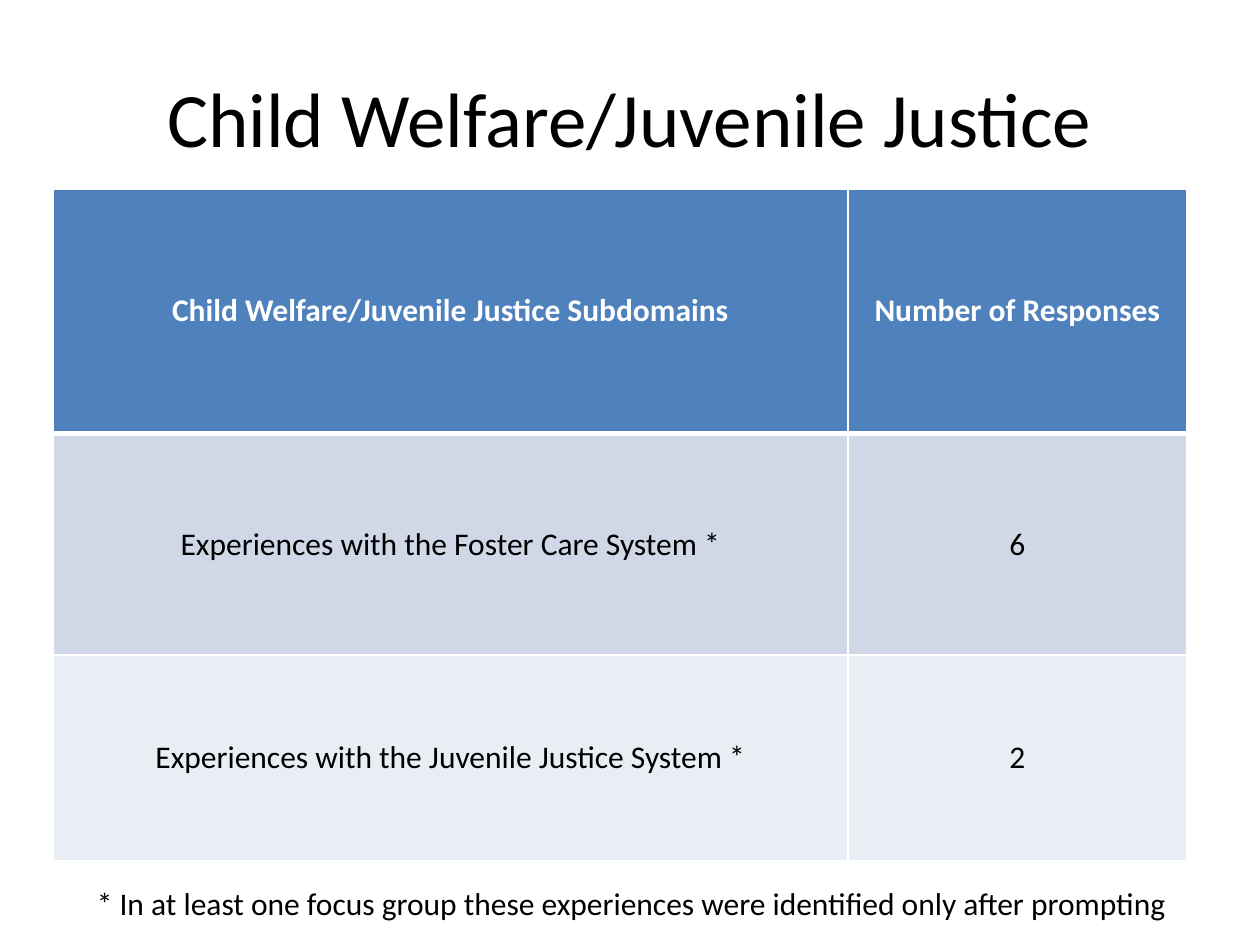
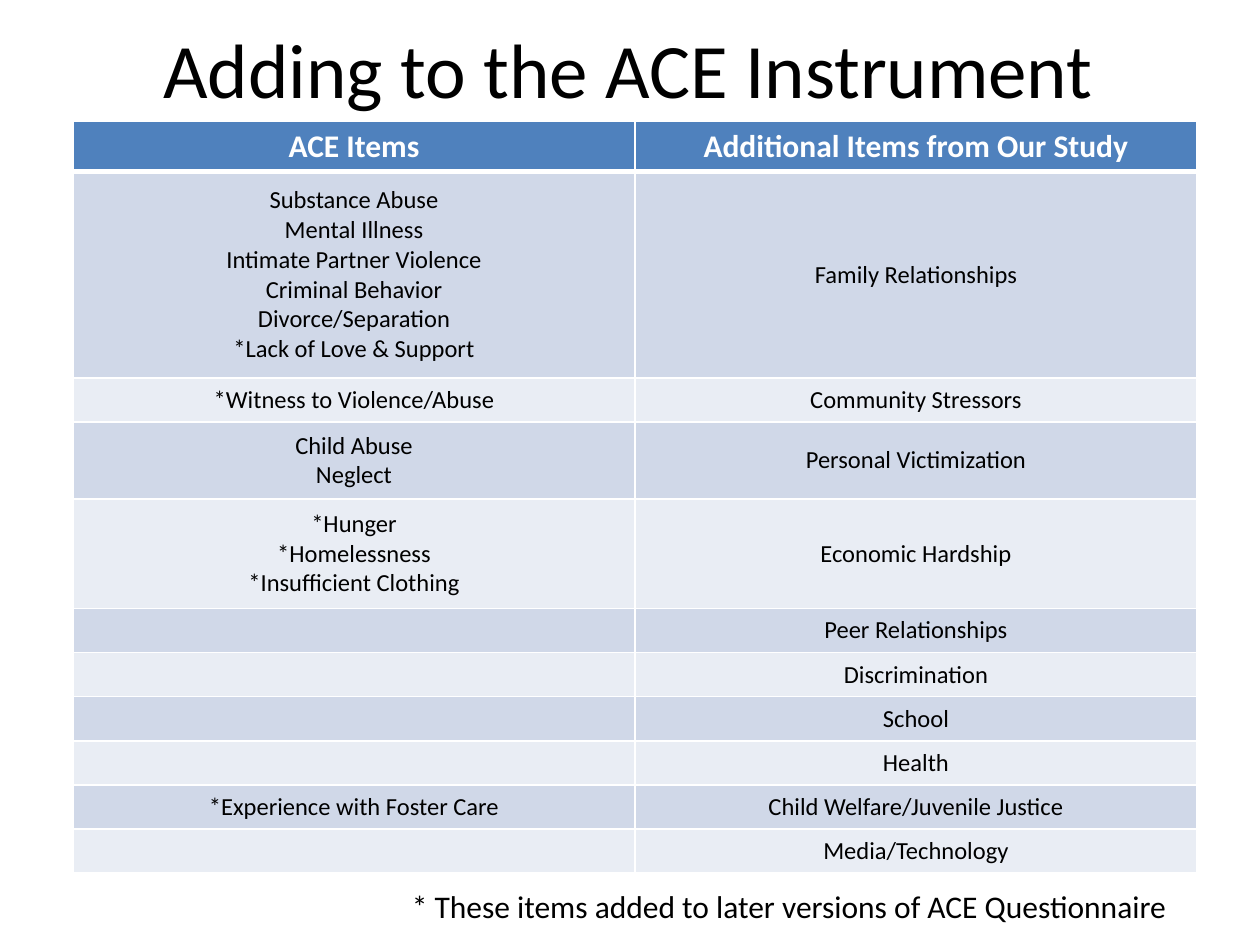
from lxml.etree import SubElement
from pptx import Presentation
from pptx.dml.color import RGBColor
from pptx.enum.text import MSO_ANCHOR as Anchor, PP_ALIGN as Align
from pptx.oxml.ns import qn
from pptx.util import Inches, Pt

BLACK = RGBColor(0x00, 0x00, 0x00)
WHITE = RGBColor(0xFF, 0xFF, 0xFF)
HEADER_BLUE = RGBColor(0x4F, 0x81, 0xBD)
BANDS = (RGBColor(0xD0, 0xD8, 0xE8), RGBColor(0xE9, 0xED, 0xF4))
FONT = "Calibri"
THIN, THICK = 1, 3

JUSTICE_ROWS = [
    ("Child Welfare/Juvenile Justice Subdomains", "Number of Responses"),
    ("Experiences with the Foster Care System *", "6"),
    ("Experiences with the Juvenile Justice System *", "2"),
]
ACE_ROWS = [
    ("ACE Items", "Additional Items from Our Study"),
    ("Substance Abuse\nMental Illness\nIntimate Partner Violence\n"
     "Criminal Behavior\nDivorce/Separation\n*Lack of Love & Support",
     "Family Relationships"),
    ("*Witness to Violence/Abuse", "Community Stressors"),
    ("Child Abuse\nNeglect", "Personal Victimization"),
    ("*Hunger\n*Homelessness\n*Insufficient Clothing", "Economic Hardship"),
    ("", "Peer Relationships"),
    ("", "Discrimination"),
    ("", "School"),
    ("", "Health"),
    ("*Experience with Foster Care", "Child Welfare/Juvenile Justice"),
    ("", "Media/Technology"),
]


def write(frame, text, size=18, color=BLACK, bold=False, align=Align.CENTER):
    """Fill a text frame, one paragraph per line of text."""
    for index, line in enumerate(text.split("\n")):
        paragraph = frame.add_paragraph() if index else frame.paragraphs[0]
        paragraph.alignment = align
        if line:
            run = paragraph.add_run()
            run.text = line
            run.font.name, run.font.size = FONT, Pt(size)
            run.font.bold, run.font.color.rgb = bold, color
        else:
            # keeps an empty cell from growing to the default text size
            SubElement(paragraph._p, qn("a:endParaRPr"), sz=str(size * 100))


def add_text(slide, box, text, anchor=Anchor.TOP, **style):
    frame = slide.shapes.add_textbox(*map(Inches, box)).text_frame
    frame.word_wrap = True
    frame.vertical_anchor = anchor
    write(frame, text, **style)


def add_title(slide, box, text):
    add_text(slide, box, text, anchor=Anchor.MIDDLE, size=44)


def add_footnote(slide, box, text):
    add_text(slide, box, text, align=Align.LEFT)


def set_borders(cell, top, bottom):
    properties = cell._tc.get_or_add_tcPr()
    for side, width in (("L", THIN), ("R", THIN), ("T", top), ("B", bottom)):
        line = SubElement(properties, qn(f"a:ln{side}"), w=str(Pt(width)))
        fill = SubElement(line, qn("a:solidFill"))
        SubElement(fill, qn("a:srgbClr"), val=str(WHITE))


def add_banded_table(slide, box, rows, widths, heights, body_size=18,
                     header_anchor=Anchor.MIDDLE):
    table = slide.shapes.add_table(
        len(rows), len(widths), *map(Inches, box)).table
    for column, width in zip(table.columns, widths):
        column.width = Inches(width)
    for r, (texts, height) in enumerate(zip(rows, heights)):
        table.rows[r].height = Inches(height)
        header = r == 0
        for c, text in enumerate(texts):
            cell = table.cell(r, c)
            set_borders(cell, top=THICK if r == 1 else THIN,
                        bottom=THICK if header else THIN)
            cell.fill.solid()
            cell.fill.fore_color.rgb = (
                HEADER_BLUE if header else BANDS[(r - 1) % 2])
            cell.vertical_anchor = header_anchor if header else Anchor.MIDDLE
            write(cell.text_frame, text, size=18 if header else body_size,
                  color=WHITE if header else BLACK, bold=header)


def build_justice_slide(slide):
    add_title(slide, (0.5, 0.3, 9, 1.25), "Child Welfare/Juvenile Justice")
    add_banded_table(slide, (0.42, 1.5, 9, 5.33), JUSTICE_ROWS,
                     widths=(6.31, 2.69), heights=(1.94, 1.76, 1.63))
    add_footnote(slide, (0.67, 6.97, 8.83, 0.4),
                 "* In at least one focus group these experiences were "
                 "identified only after prompting")


def build_ace_slide(slide):
    add_title(slide, (0.49, 0, 9, 1.08), "Adding to the ACE Instrument")
    add_banded_table(slide, (0.58, 0.96, 8.92, 6), ACE_ROWS,
                     widths=[4.46] * 2,
                     heights=[0.39, 1.64, 0.35, 0.61, 0.87] + [0.35] * 6,
                     body_size=14, header_anchor=Anchor.TOP)
    add_footnote(slide, (3.17, 6.99, 6.33, 0.4),
                 "* These items added to later versions of ACE Questionnaire")


def main():
    deck = Presentation()
    deck.slide_width, deck.slide_height = Inches(10), Inches(7.5)
    for build in (build_justice_slide, build_ace_slide):
        build(deck.slides.add_slide(deck.slide_layouts[6]))
    deck.save("out.pptx")


if __name__ == "__main__":
    main()
